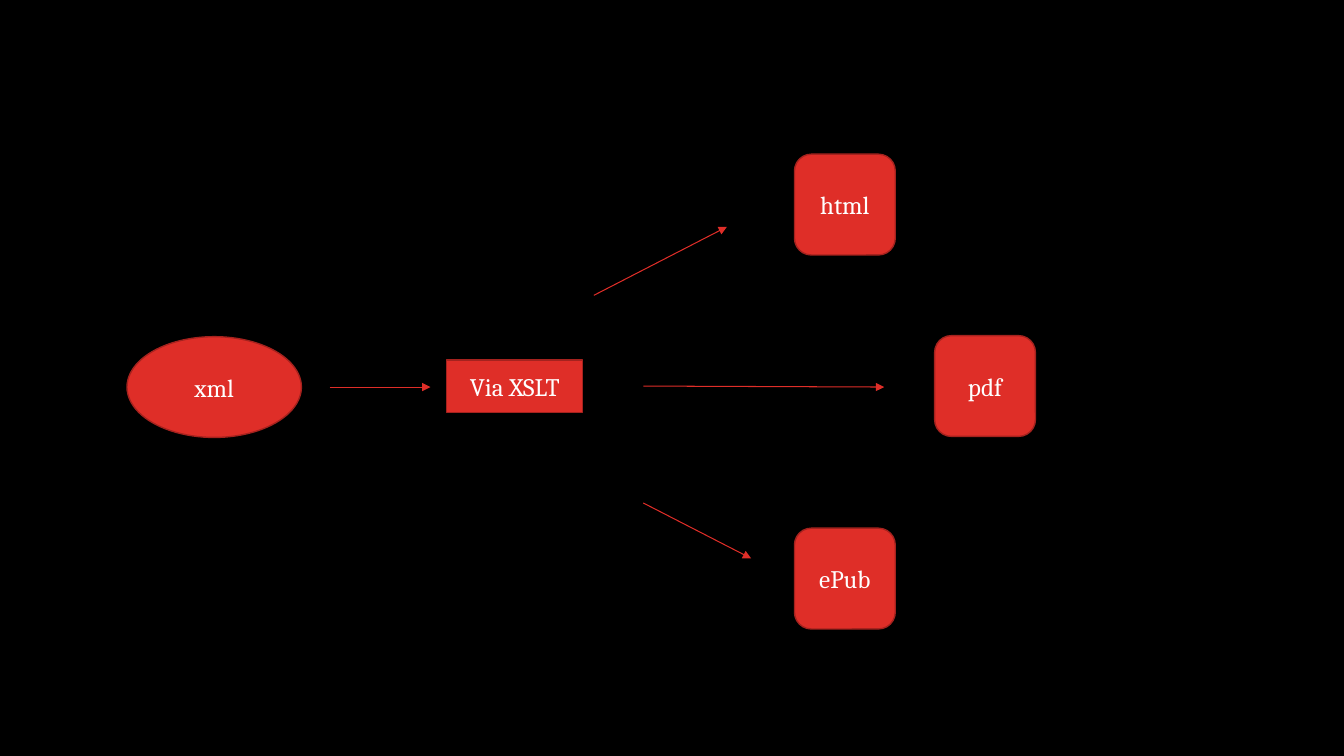
from lxml.etree import SubElement
from pptx import Presentation
from pptx.dml.color import RGBColor
from pptx.enum.shapes import MSO_CONNECTOR, MSO_SHAPE as Preset
from pptx.enum.text import MSO_ANCHOR, PP_ALIGN
from pptx.oxml.ns import qn
from pptx.util import Inches, Pt

RED = "DF2E28"
DARK_RED = "A5221E"


def paint(color_format, color):
    """Make a fill solid in a hex colour."""
    color_format.solid()
    color_format.fore_color.rgb = RGBColor.from_string(color)


def add_node(slide, preset, label, left, top, width, height):
    """Add a labelled red node."""
    node = slide.shapes.add_shape(
        preset, Inches(left), Inches(top), Inches(width), Inches(height))
    node.shadow.inherit = False
    paint(node.fill, RED)
    paint(node.line.fill, DARK_RED)
    node.line.width = Pt(1)
    frame = node.text_frame
    frame.text = label
    frame.vertical_anchor = MSO_ANCHOR.MIDDLE
    paragraph = frame.paragraphs[0]
    paragraph.alignment = PP_ALIGN.CENTER
    font = paragraph.runs[0].font
    font.name = "Cambria"
    font.size = Pt(18)
    paint(font.fill, "FFFFFF")


def add_arrow(slide, start, end):
    """Add a thin red arrow between two points."""
    arrow = slide.shapes.add_connector(
        MSO_CONNECTOR.STRAIGHT, *map(Inches, start + end))
    paint(arrow.line.fill, RED)
    arrow.line.width = Pt(0.75)
    SubElement(arrow.line._get_or_add_ln(), qn("a:tailEnd"), type="triangle")
    SubElement(arrow._element.spPr, qn("a:effectLst"))


def main():
    """Build the XML publishing diagram."""
    deck = Presentation()
    deck.slide_width, deck.slide_height = Inches(13.33), Inches(7.5)
    slide = deck.slides.add_slide(deck.slide_layouts[6])
    paint(slide.background.fill, "000000")

    add_node(slide, Preset.OVAL, "xml", 1.26, 3.34, 1.73, 1)
    add_node(slide, Preset.RECTANGLE, "Via XSLT", 4.43, 3.57, 1.35, 0.52)
    for output, left, top in (
            ("html", 7.88, 1.53), ("ePub", 7.88, 5.24), ("pdf", 9.27, 3.33)):
        add_node(slide, Preset.ROUNDED_RECTANGLE, output, left, top, 1, 1)

    for start, end in (
            ((3.27, 3.84), (4.27, 3.84)),
            ((5.89, 2.93), (7.21, 2.25)),
            ((6.38, 4.99), (7.45, 5.54)),
            ((6.38, 3.83), (8.77, 3.84))):
        add_arrow(slide, start, end)

    deck.save("out.pptx")


if __name__ == "__main__":
    main()
